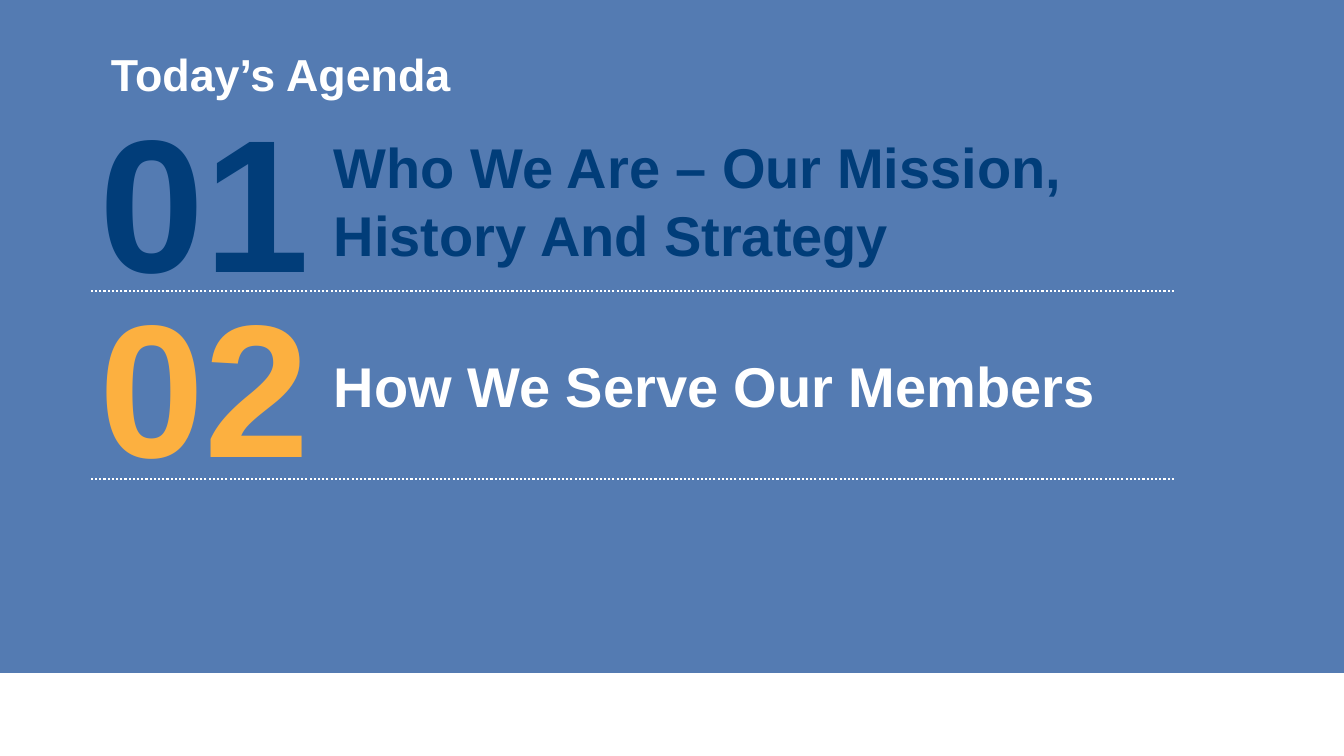
from pptx import Presentation, util as u
from pptx.dml.color import RGBColor
from pptx.enum import dml, shapes, text
from pptx.oxml.ns import qn
from lxml import etree

THEME = {
    "font": "Arial",
    "band": "547BB2", "white": "FFFFFF", "navy": "013D79", "gold": "FCB040",
    "title": 32, "number": 135, "topic": 40,
}


def px(*sizes):
    return [round(n * 914400 / 100.8) for n in sizes]


def write(frame, lines, size, color, align):
    frame.word_wrap = True
    frame.text = "\n".join(lines)
    for para in frame.paragraphs:
        para.alignment = align
        font = para.font
        font.name, font.size, font.bold = THEME["font"], u.Pt(THEME[size]), True
        font.color.rgb = RGBColor.from_string(THEME[color])


deck = Presentation()
deck.slide_width, deck.slide_height = px(1344, 756)
slide = deck.slides.add_slide(deck.slide_layouts[5])
left, center = text.PP_ALIGN.LEFT, text.PP_ALIGN.CENTER

# Blue band, behind the title
band = slide.shapes.add_shape(shapes.MSO_SHAPE.RECTANGLE, *px(0, 0, 1344, 673))
band.shadow.inherit = False
band.fill.solid()
band.fill.fore_color.rgb = RGBColor.from_string(THEME["band"])
band.line.fill.background()

# Title
title = slide.shapes.title
band._element.addnext(title._element)
title.left, title.top, title.width, title.height = px(111, 32, 1233, 69)
frame = title.text_frame
frame.margin_left = frame.margin_top = frame.margin_right = frame.margin_bottom = 0
frame.vertical_anchor = text.MSO_ANCHOR.BOTTOM
write(frame, ["Today’s Agenda"], "title", "white", left)
frame.paragraphs[0].line_spacing = 0.85

# Agenda items: number, topic lines, colours, then tops of number, topic and rule
items = [
    ("01", ["Who We Are – Our Mission,", "History And Strategy"], "navy", "navy", 79, 128, 291),
    ("02", ["How We Serve Our Members"], "gold", "white", 264, 347, 479),
]
for number, topic, tint, ink, top, head, rule in items:
    box = slide.shapes.add_textbox(*px(41, top, 328, 244))
    write(box.text_frame, [number], "number", tint, center)

    box = slide.shapes.add_textbox(*px(324, head, 1010, 10 + 68 * len(topic)))
    write(box.text_frame, topic, "topic", ink, left)

    line = slide.shapes.add_connector(shapes.MSO_CONNECTOR.STRAIGHT, *px(1174, rule, 89, rule))
    line.line.color.rgb = RGBColor.from_string(THEME["white"])
    line.line.width = u.Pt(1.5)
    line.line.dash_style = dml.MSO_LINE.ROUND_DOT
    etree.SubElement(line._element.spPr, qn("a:effectLst"))

deck.save("out.pptx")
